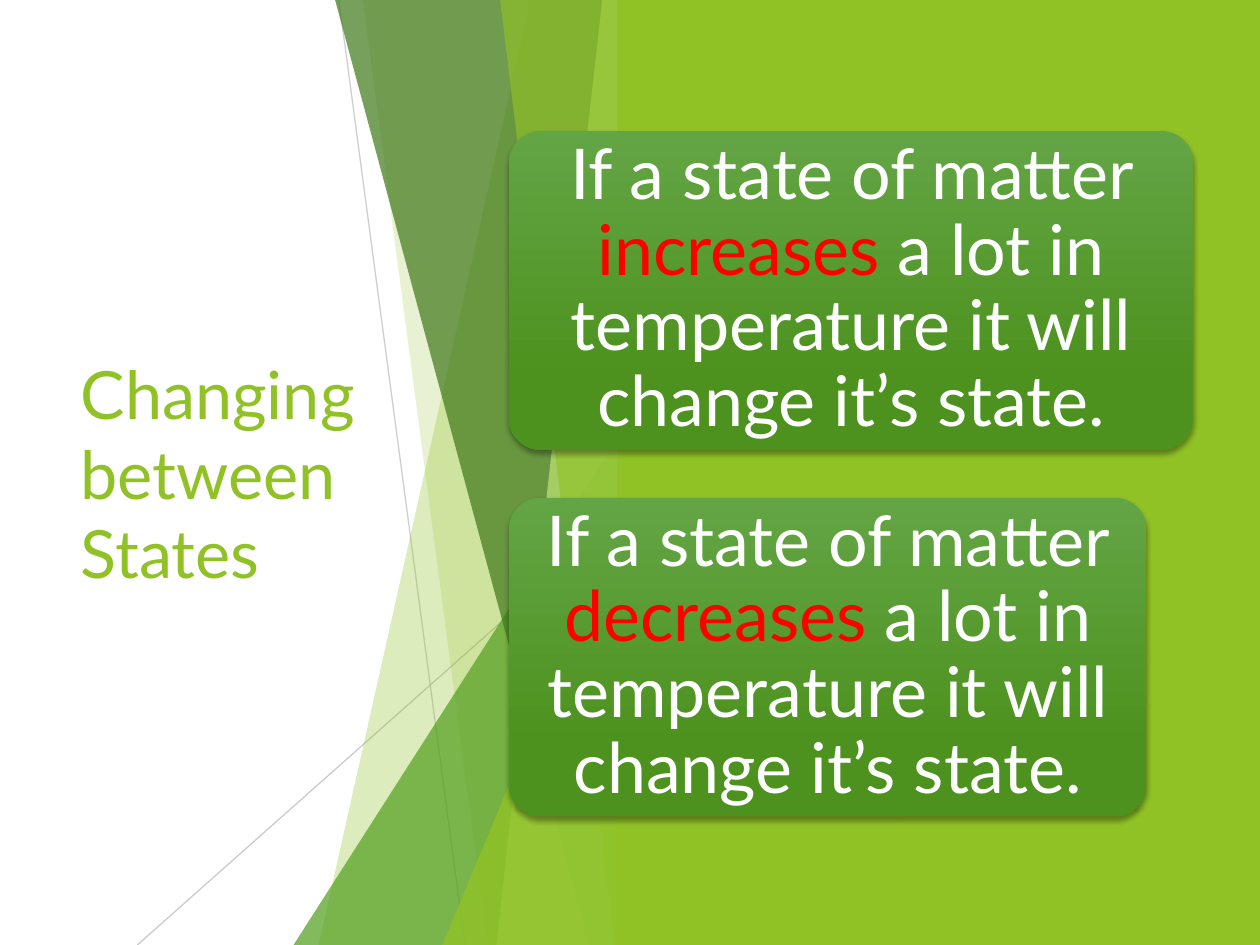
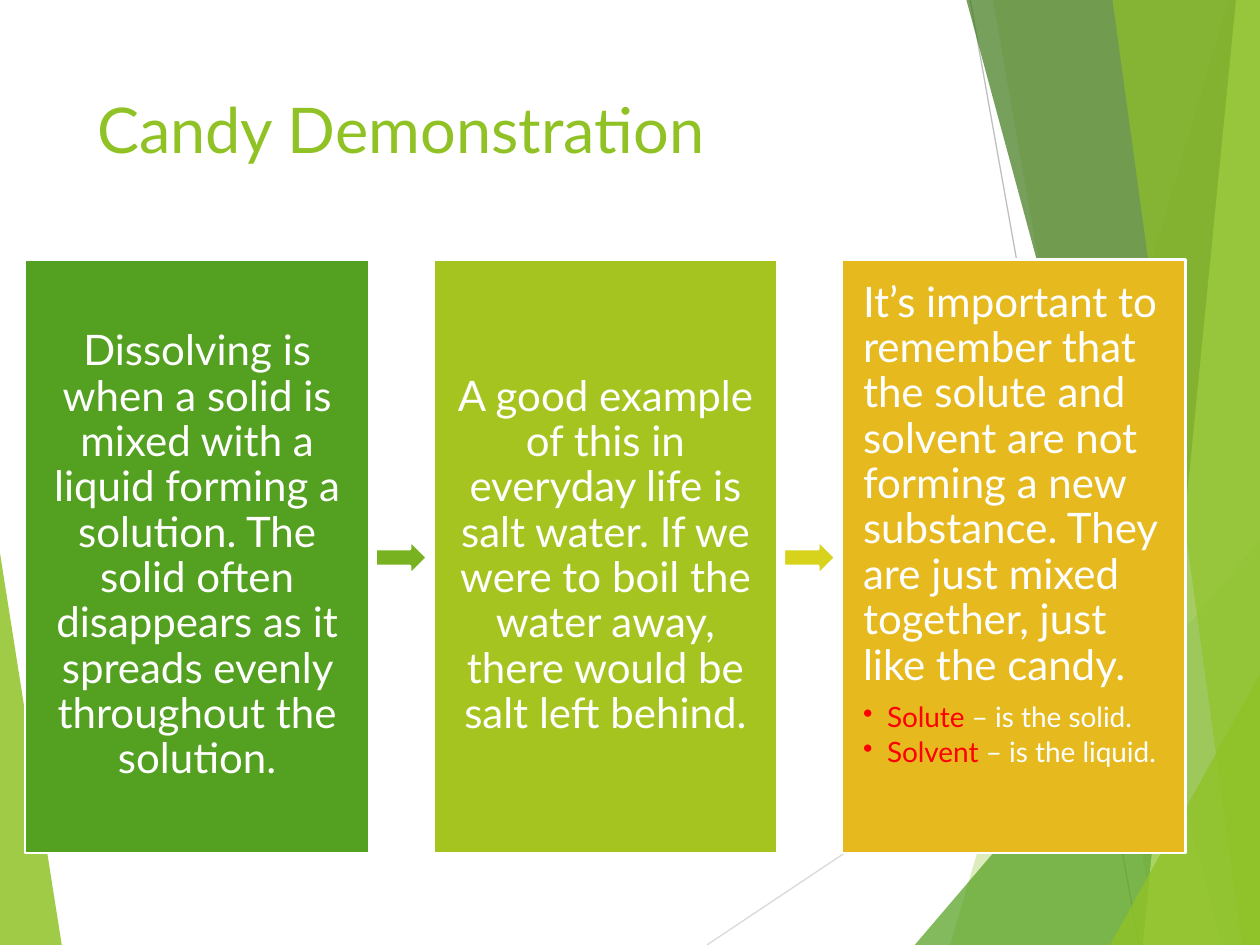
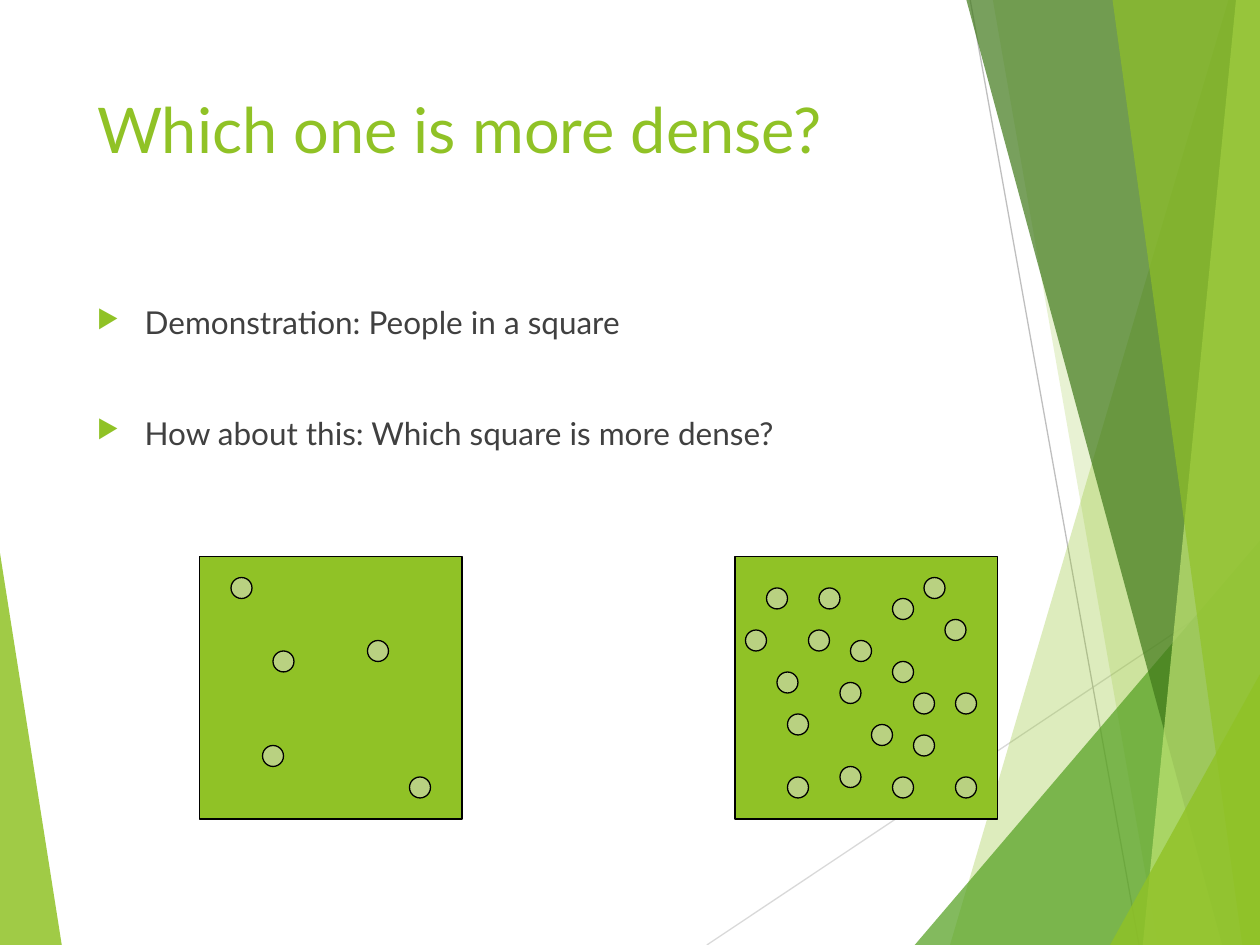
from pptx import Presentation
from pptx import util as u
from pptx.dml import color as dml
from pptx.enum import shapes, text
from pptx.oxml import ns
from lxml import etree

FONT = "Lato"
LIME, GREEN, FOREST, PALE = "90C226", "54A021", "3F7819", "C0E474"
WHITE, BLACK, RED, BODY = "FFFFFF", "000000", "FF0000", "404040"
PRESET = shapes.MSO_SHAPE
LEFT, CENTER = text.PP_ALIGN.LEFT, text.PP_ALIGN.CENTER
TOP, MIDDLE = text.MSO_ANCHOR.TOP, text.MSO_ANCHOR.MIDDLE

MASTER_RAYS = [((5.61, 7.5), (10, 4.57), "D9D9D9"), ((7.7, 0), (9.04, 7.5), "BFBFBF")]
MASTER_FACETS = [
    ([(0, 4.39), (0.49, 7.5), (0, 7.5)], LIME, 85),
    ([(9.75, 0), (7.54, 7.5), (10, 7.5), (10, 0)], LIME, 30),
    ([(7.88, 0), (9.19, 7.5), (10, 7.5), (10, 0)], LIME, 20),
    ([(7.26, 7.5), (10, 4.29), (10, 7.5)], GREEN, 72),
    ([(7.67, 0), (9.7, 7.5), (10, 7.5), (10, 0)], FOREST, 70),
    ([(9.81, 0), (9.07, 7.5), (10, 7.5), (10, 0)], PALE, 70),
    ([(8.83, 0), (9.86, 7.5), (10, 7.5), (10, 0)], LIME, 65),
    ([(8.81, 7.5), (10, 5.35), (10, 7.5)], LIME, 80),
]
PANEL_RAYS = [((2.69, 0), (3.69, 7.5), 75), ((5, 4.03), (1.09, 7.5), 80)]
PANEL_FACETS = [
    ([(4.21, 0), (5, 0), (5, 7.5), (2.53, 7.5)], LIME, 30),
    ([(2.88, 0), (5, 0), (5, 7.5), (3.87, 7.5)], LIME, 20),
    ((2.33, 3.33, 2.67, 4.17), GREEN, 72),
    ([(2.66, 0), (5, 0), (5, 7.5), (4.68, 7.5)], FOREST, 70),
    ([(4.78, 0), (5, 0), (5, 7.5), (3.94, 7.5)], PALE, 70),
    ([(3.97, 0), (5, 0), (5, 7.5), (4.88, 7.5)], LIME, 65),
    ((3.51, 3.93, 1.49, 3.57), LIME, 80),
]
SPARSE = [(3, 2), (6, 18), (16, 8), (20, 21), (7, 9)]
DENSE = [
    (3, 3), (8, 3), (4, 11), (15, 4), (10, 20), (10, 12), (15, 10),
    (20, 6), (13, 16), (21, 13), (5, 21), (21, 21), (1, 7), (7, 7),
    (15, 21), (11, 8), (5, 15), (17, 13), (17, 17), (18, 2),
]


def rgb(value):
    """Turn a hex string into a colour."""
    return dml.RGBColor.from_string(value)


def child(parent, tag, **attributes):
    """Append a DrawingML element to a parent element."""
    return etree.SubElement(parent, ns.qn(tag), {k: str(v) for k, v in attributes.items()})


def fade(element, opacity):
    """Give every colour inside an element an opacity in percent."""
    for tone in element.iter(ns.qn("a:srgbClr")):
        child(tone, "a:alpha", val=opacity * 1000)


def paint(shape, fill, line=None, width=0.75, opacity=100):
    """Set the fill and outline of a shape and drop its shadow."""
    shape.shadow.inherit = False
    shape.fill.solid()
    shape.fill.fore_color.rgb = rgb(fill)
    if opacity < 100:
        fade(shape.element.spPr, opacity)
    if line:
        shape.line.color.rgb = rgb(line)
        shape.line.width = u.Pt(width)
    else:
        shape.line.fill.background()
    return shape


def block(slide, preset, box, fill, **style):
    """Add a painted preset shape."""
    return paint(slide.shapes.add_shape(preset, *map(u.Inches, box)), fill, **style)


def facet(slide, outline, fill, opacity):
    """Add a translucent facet from its corners, or a right-leaning triangle from its box."""
    if isinstance(outline, tuple):
        block(slide, PRESET.ISOSCELES_TRIANGLE, outline, fill, opacity=opacity).adjustments[0] = 1
        return
    start, *corners = [(u.Inches(x), u.Inches(y)) for x, y in outline]
    builder = slide.shapes.build_freeform(*start)
    builder.add_line_segments(corners, close=True)
    paint(builder.convert_to_shape(), fill, opacity=opacity)


def ray(slide, start, end, color, opacity=100):
    """Add a thin straight line."""
    line = slide.shapes.add_connector(
        shapes.MSO_CONNECTOR.STRAIGHT, *map(u.Inches, (*start, *end)))
    line.line.color.rgb = rgb(color)
    line.line.width = u.Pt(0.75)
    if opacity < 100:
        fade(line.element.spPr, opacity)
    child(line.element.spPr, "a:effectLst")


def set_frame(frame, anchor=TOP, margin=None):
    """Set wrapping, anchor and margins of a text frame."""
    frame.word_wrap = True
    frame.auto_size = text.MSO_AUTO_SIZE.NONE
    frame.vertical_anchor = anchor
    if margin is not None:
        frame.margin_left = frame.margin_right = u.Inches(margin)
        frame.margin_top = frame.margin_bottom = u.Inches(margin)


def write(frame, content, size, color, align=LEFT, spacing=1.0, before=0, after=0,
          accent="", bullet="", bullet_color=None, bullet_size=100, indent=0):
    """Write one paragraph, with an accented word in red and an optional bullet."""
    paragraph = frame.paragraphs[0]
    if paragraph.runs:
        paragraph = frame.add_paragraph()
    paragraph.alignment, paragraph.line_spacing = align, spacing
    paragraph.space_before, paragraph.space_after = u.Pt(before), u.Pt(after)
    head, word, tail = content.partition(accent) if accent else (content, "", "")
    for part, tone in ((head, color), (word, RED), (tail, color)):
        if part:
            run = paragraph.add_run()
            run.text = part
            run.font.name, run.font.size = FONT, u.Pt(size)
            run.font.color.rgb = rgb(tone)
    if bullet:
        properties = paragraph._p.get_or_add_pPr()
        properties.set("marL", str(u.Inches(indent)))
        properties.set("indent", str(-u.Inches(indent)))
        if bullet_color:
            child(child(properties, "a:buClr"), "a:srgbClr", val=bullet_color)
        child(properties, "a:buSzPct", val=bullet_size * 1000)
        child(properties, "a:buChar", char=bullet)


def set_title(slide, content, box=(0.67, 0.67, 6.94, 1.44), size=36, anchor=TOP):
    """Place the title placeholder in front of what is drawn so far."""
    title = slide.shapes.title
    slide.shapes.element.append(title.element)
    title.left, title.top, title.width, title.height = map(u.Inches, box)
    set_frame(title.text_frame, anchor)
    write(title.text_frame, content, size, LIME)


def decorate_layout(layout, slide):
    """Draw the shared facets once and move them behind the layout's placeholders."""
    facet(slide, *MASTER_FACETS[0])
    for start, end, color in MASTER_RAYS:
        ray(slide, start, end, color)
    for outline, fill, opacity in MASTER_FACETS[1:]:
        facet(slide, outline, fill, opacity)
    decorations = [s.element for s in slide.shapes if not s.is_placeholder]
    for position, element in enumerate(decorations, start=2):
        layout.shapes.element.insert(position, element)


def statement(slide, top, width, content, accent):
    """Add a rounded gradient panel with a statement."""
    panel = block(slide, PRESET.ROUNDED_RECTANGLE, (4.04, top, width, 2.53), GREEN)
    panel.adjustments[0] = 0.1
    panel.fill.gradient()
    panel.fill.gradient_angle = 270
    for stop, (position, color) in zip(panel.fill.gradient_stops,
                                       ((0, "63A545"), (0.78, "4D921E"))):
        stop.position, stop.color.rgb = position, rgb(color)
    effects = panel.element.spPr.find(ns.qn("a:effectLst"))
    shadow = child(effects, "a:outerShdw", blurRad=u.Pt(3), dist=u.Pt(2),
                   dir=5400000, rotWithShape=0)
    child(shadow, "a:srgbClr", val=BLACK)
    fade(shadow, 35)
    set_frame(panel.text_frame, MIDDLE, 0.03)
    write(panel.text_frame, content, 40, WHITE, CENTER, 0.9, accent=accent)


def card(slide, left, fill, anchor):
    """Add a step card and return its text frame."""
    step = block(slide, PRESET.RECTANGLE, (left, 2.06, 2.73, 4.71), fill, line=WHITE, width=1.5)
    set_frame(step.text_frame, anchor, 0.17)
    return step.text_frame


def particle_square(slide, left, particles):
    """Add a square with particles placed on a grid of twelfths of an inch."""
    top, cell = 53 / 12, 1 / 12
    block(slide, PRESET.RECTANGLE, (left, top, 25 * cell, 25 * cell), LIME, line=BLACK)
    for column, row in particles:
        box = (left + column * cell, top + row * cell, 2 * cell, 2 * cell)
        block(slide, PRESET.OVAL, box, "B9D181", line=BLACK)


def changing_states(slide):
    """Build the slide on changing between states."""
    block(slide, PRESET.RECTANGLE, (0, 0, 10, 7.5), WHITE)
    for start, end, opacity in PANEL_RAYS:
        ray(slide, start, end, "BFBFBF", opacity)
    for outline, fill, opacity in PANEL_FACETS:
        facet(slide, outline, fill, opacity)
    block(slide, PRESET.RECTANGLE, (4.9, 0, 5.1, 7.5), LIME)
    set_title(slide, "Changing between States", (0.54, 1.51, 2.91, 4.48), 38, MIDDLE)
    for top, width, change in ((1.04, 5.43, "increases"), (3.95, 5.06, "decreases")):
        statement(slide, top, width, f"If a state of matter {change} a lot in "
                  "temperature it will change it’s state.", change)


def demonstration(slide):
    """Build the slide on dissolving."""
    set_title(slide, "Candy Demonstration")
    first, pitch = 0.2, 3.24
    steps = [
        (GREEN, "Dissolving is when a solid is mixed with a liquid forming a solution. "
         "The solid often disappears as it spreads evenly throughout the solution."),
        ("A5C41F", "A good example of this in everyday life is salt water. If we were to "
         "boil the water away, there would be salt left behind."),
    ]
    for index, (fill, content) in enumerate(steps):
        write(card(slide, first + index * pitch, fill, MIDDLE), content, 24, WHITE, CENTER, 0.9)
    for index, fill in enumerate(("79B220", "D7D31D")):
        box = (first + index * pitch + 2.78, 4.29, 0.41, 0.27)
        block(slide, PRESET.RIGHT_ARROW, box, fill, line=WHITE, width=1.5)
    reminder = card(slide, first + 2 * pitch, "E6B91E", TOP)
    write(reminder, "It’s important to remember that the solute and solvent are not forming a "
          "new substance. They are just mixed together, just like the candy.",
          24, WHITE, spacing=0.9, after=8.4)
    for term, meaning in (("Solute", "solid"), ("Solvent", "liquid")):
        write(reminder, f"{term} – is the {meaning}.", 16, WHITE, spacing=0.9, after=2.4,
              accent=term, bullet="•", bullet_color=RED, indent=0.19)


def density(slide):
    """Build the slide that compares two densities."""
    set_title(slide, "Which one is more dense?")
    questions = slide.shapes.add_textbox(*map(u.Inches, (0.67, 2.36, 6.94, 4.24))).text_frame
    set_frame(questions)
    for content, before in (("Demonstration: People in a square", 10),
                            ("How about this: Which square is more dense?", 41.6)):
        write(questions, content, 18, BODY, before=before, bullet="▶",
              bullet_color=LIME, bullet_size=80, indent=0.38)
    particle_square(slide, 19 / 12, SPARSE)
    particle_square(slide, 70 / 12, DENSE)


def main():
    """Build and save the presentation."""
    deck = Presentation()
    deck.slide_width, deck.slide_height = u.Inches(10), u.Inches(7.5)
    layout = deck.slide_layouts[5]
    pages = [deck.slides.add_slide(layout) for _ in range(3)]
    decorate_layout(layout, pages[0])
    for build, page in zip((changing_states, demonstration, density), pages):
        build(page)
    deck.save("out.pptx")


if __name__ == "__main__":
    main()
